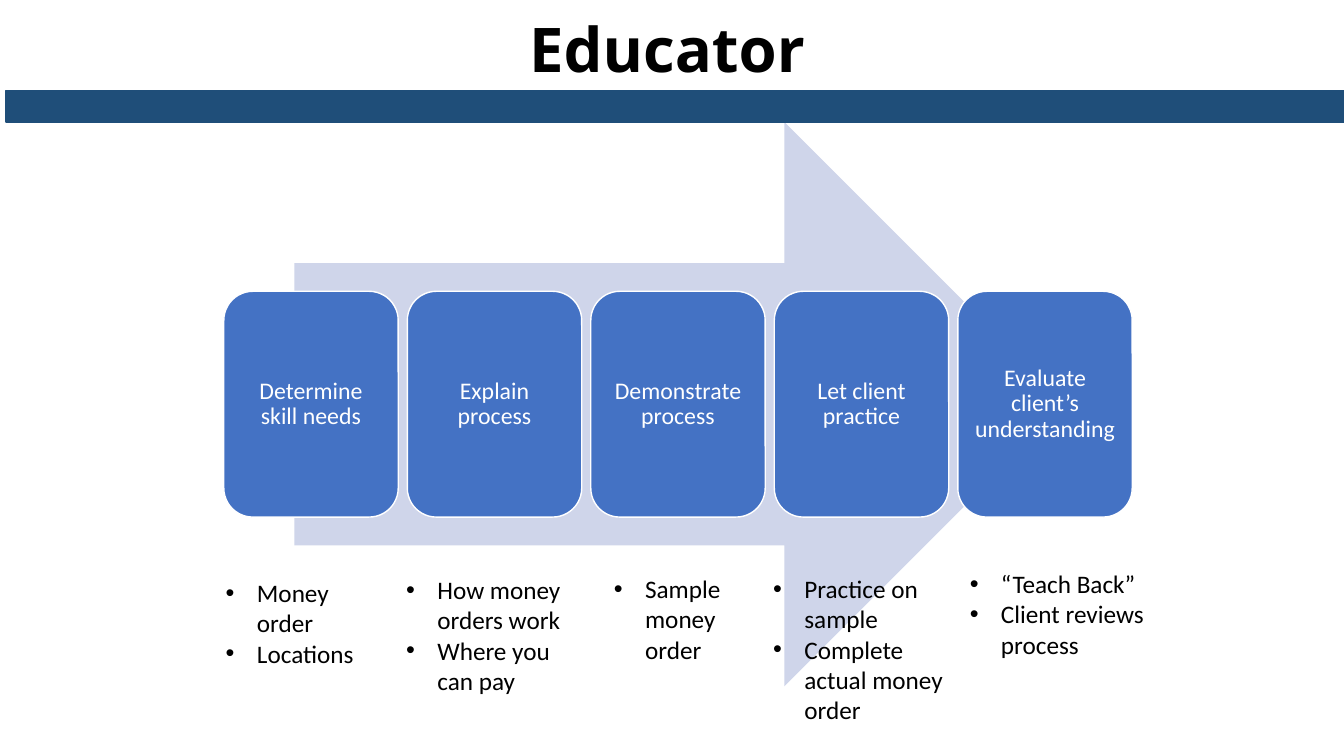
from dataclasses import dataclass

from lxml import etree
from pptx import Presentation
from pptx.dml.color import RGBColor
from pptx.enum.shapes import MSO_SHAPE
from pptx.enum.text import MSO_ANCHOR, PP_ALIGN
from pptx.oxml.ns import qn
from pptx.util import Inches, Pt

ARROW = MSO_SHAPE.RIGHT_ARROW
RECTANGLE = MSO_SHAPE.RECTANGLE
ROUNDED = MSO_SHAPE.ROUNDED_RECTANGLE
MIDDLE = MSO_ANCHOR.MIDDLE
CENTER = PP_ALIGN.CENTER


@dataclass(frozen=True)
class Theme:
    navy: RGBColor = RGBColor(0x1F, 0x4E, 0x79)
    blue: RGBColor = RGBColor(0x44, 0x72, 0xC4)
    pale: RGBColor = RGBColor(0xCF, 0xD5, 0xEA)
    white: RGBColor = RGBColor(0xFF, 0xFF, 0xFF)
    black: RGBColor = RGBColor(0, 0, 0)
    heading_font: str = "Open Sans"
    body_font: str = "Calibri"
    title_size: int = 44
    step_size: int = 17
    note_size: int = 18


THEME = Theme()

STEPS = [
    "Determine skill needs",
    "Explain process",
    "Demonstrate process",
    "Let client practice",
    "Evaluate client’s understanding",
]

NOTES = [
    ((2.14, 5.68, 1.51, 1.01), ["Money order", "Locations"]),
    ((3.93, 5.65, 1.85, 1.31), ["How money orders work", "Where you can pay"]),
    ((5.99, 5.64, 1.42, 1.01), ["Sample money order"]),
    ((7.57, 5.64, 2, 1.62), ["Practice on sample", "Complete actual money order"]),
    ((9.52, 5.59, 2.07, 1.01), ["“Teach Back”", "Client reviews process"]),
]


def add_block(page, kind, box, fill, outline=None):
    block = page.shapes.add_shape(kind, *map(Inches, box))
    block.shadow.inherit = False
    block.fill.solid()
    block.fill.fore_color.rgb = fill
    if outline is None:
        block.line.fill.background()
    else:
        block.line.color.rgb = outline
        block.line.width = Pt(1)
    return block


def style(paragraph, name, size, color, bold=False):
    paragraph.font.name = name
    paragraph.font.size = Pt(size)
    paragraph.font.color.rgb = color
    paragraph.font.bold = bold


def add_bullet(paragraph, indent):
    properties = paragraph._p.get_or_add_pPr()
    properties.set("marL", str(Inches(indent)))
    properties.set("indent", str(-Inches(indent)))
    etree.SubElement(properties, qn("a:buFont")).set("typeface", "Arial")
    etree.SubElement(properties, qn("a:buChar")).set("char", "•")


def add_step(page, box, label):
    step = add_block(page, ROUNDED, box, THEME.blue, THEME.white)
    frame = step.text_frame
    frame.word_wrap = True
    frame.vertical_anchor = MIDDLE
    frame.margin_left = frame.margin_right = Inches(0.07)
    frame.margin_top = frame.margin_bottom = Inches(0.07)
    paragraph = frame.paragraphs[0]
    paragraph.text = label
    paragraph.alignment = CENTER
    paragraph.line_spacing = 0.9
    style(paragraph, THEME.body_font, THEME.step_size, THEME.white)


def add_process(page, box):
    left, top, width, height = box
    gap = 0.09
    step_width = (width - gap * (len(STEPS) - 1)) / len(STEPS)
    arrow_box = (left + 0.7, top, width * 0.85, height)
    add_block(page, ARROW, arrow_box, THEME.pale)
    for index, label in enumerate(STEPS):
        step_left = left + index * (step_width + gap)
        add_step(page, (step_left, top + height * 0.3, step_width, height * 0.4), label)


def add_notes(page, box, lines):
    frame = page.shapes.add_textbox(*map(Inches, box)).text_frame
    frame.word_wrap = True
    for index, line in enumerate(lines):
        paragraph = frame.add_paragraph() if index else frame.paragraphs[0]
        paragraph.text = line
        add_bullet(paragraph, 0.31)
        style(paragraph, THEME.body_font, THEME.note_size, THEME.black)


def add_header(page, box):
    left, top, width, height = box
    bar_height = 0.31
    add_block(page, RECTANGLE, (left, top + height - bar_height, width, bar_height),
              THEME.navy, THEME.navy)
    title_box = (left + 5.09, top, 3.29, height - bar_height)
    frame = page.shapes.add_textbox(*map(Inches, title_box)).text_frame
    frame.word_wrap = True
    paragraph = frame.paragraphs[0]
    paragraph.text = "Educator"
    style(paragraph, THEME.heading_font, THEME.title_size, THEME.black, bold=True)


def main():
    deck = Presentation()
    deck.slide_width = Inches(13.33)
    deck.slide_height = Inches(7.5)
    page = deck.slides.add_slide(deck.slide_layouts[6])
    add_process(page, (2.22, 1.21, 9.01, 5.6))
    for box, lines in NOTES:
        add_notes(page, box, lines)
    add_header(page, (0.06, 0.06, 13.33, 1.15))
    deck.save("out.pptx")


if __name__ == "__main__":
    main()
